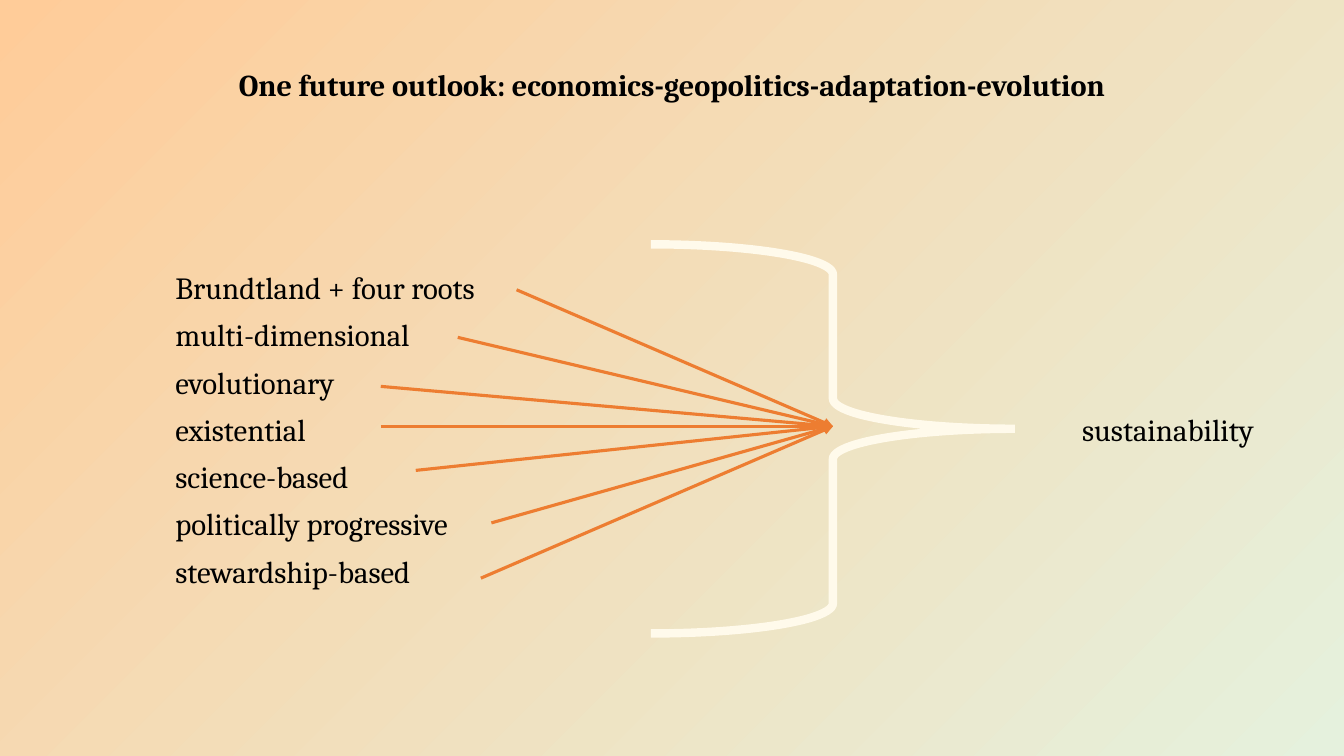
"""Build a slide on the roots of sustainability converging through a brace."""
import pptx
import pptx.util
import pptx.dml.color
import pptx.enum.shapes
import pptx.enum.text
import pptx.oxml
import pptx.oxml.ns

Pt = pptx.util.Pt
RGBColor = pptx.dml.color.RGBColor
PP_ALIGN = pptx.enum.text.PP_ALIGN

TITLE = "One future outlook: economics-geopolitics-adaptation-evolution"
ROOTS = [
    ("Brundtland + four roots", (369, 207)),
    ("multi-dimensional", (327, 241)),
    ("evolutionary", (272, 276)),
    ("existential", (272, 304.5)),
    ("science-based", (297, 336)),
    ("politically progressive", (351, 373.5)),
    ("stewardship-based", (343.5, 413)),
]
RESULT, RESULT_ROW = "sustainability", 3

BLACK = RGBColor(0, 0, 0)
PEACH = RGBColor(0xFF, 0xCC, 0x99)
MINT = RGBColor(0xE5, 0xF1, 0xDD)
CREAM = RGBColor(0xFF, 0xFA, 0xEB)
ORANGE = RGBColor(0xED, 0x7D, 0x31)

LIST_LEFT, LIST_TOP, ROW_PITCH, ROW_GAP = 125.3, 195, 33.7, 10
BRACE = (465, 174.5, 260, 278)
FOCUS = (BRACE[0] + BRACE[2] / 2, 304.5)
TITLE_FONT = {"name": "Cambria", "size": Pt(21.6), "bold": True}
BODY_FONT = {"name": "Cambria", "size": Pt(22), "bold": False}


def add_text(s, box, lines, font, align=PP_ALIGN.LEFT):
    tf = s.shapes.add_textbox(*map(Pt, box)).text_frame
    frame = {"word_wrap": True, "margin_left": 0, "margin_right": 0,
             "margin_top": 0, "margin_bottom": 0}
    for key, value in frame.items():
        setattr(tf, key, value)
    for i, line in enumerate(lines):
        p = tf.add_paragraph() if i else tf.paragraphs[0]
        spacing = {"alignment": align, "line_spacing": 0.9,
                   "space_before": Pt(0), "space_after": Pt(ROW_GAP)}
        for key, value in spacing.items():
            setattr(p, key, value)
        r = p.add_run()
        r.text = line
        for key, value in font.items():
            setattr(r.font, key, value)
        r.font.color.rgb = BLACK


def style_line(sp, color, width, detail):
    sp.line.color.rgb = color
    sp.line.width = Pt(width)
    sp.line._get_or_add_ln().append(pptx.oxml.parse_xml(
        f'<a:{detail} {pptx.oxml.ns.nsdecls("a")}/>'))


def add_arrow(s, start, end):
    sp = s.shapes.add_connector(
        pptx.enum.shapes.MSO_CONNECTOR.STRAIGHT, *map(Pt, start + end))
    style_line(sp, ORANGE, 2.25, 'tailEnd type="triangle"'.replace(
        "tailEnd", f'tailEnd {pptx.oxml.ns.nsdecls("a")}', 0))
    sp._element.spPr.append(pptx.oxml.parse_xml(
        f'<a:effectLst {pptx.oxml.ns.nsdecls("a")}/>'))


def add_brace(s):
    sp = s.shapes.add_shape(
        pptx.enum.shapes.MSO_SHAPE.RIGHT_BRACE, *map(Pt, BRACE))
    sp.adjustments[0], sp.adjustments[1] = 0.083, 0.474
    sp.shadow.inherit = False
    sp.fill.background()
    style_line(sp, CREAM, 6, 'miter lim="800000"')


def main():
    prs = pptx.Presentation()
    prs.slide_width, prs.slide_height = Pt(960), Pt(540)
    s = prs.slides.add_slide(prs.slide_layouts[6])
    fill = s.background.fill
    fill.gradient()
    fill.gradient_angle = 315
    for stop, color in zip(fill.gradient_stops, (PEACH, MINT)):
        stop.color.rgb = color

    add_text(s, (120, 50, 720, 27), [TITLE], TITLE_FONT, PP_ALIGN.CENTER)
    add_text(s, (LIST_LEFT, LIST_TOP, 250, ROW_PITCH * len(ROOTS)),
             [name for name, start in ROOTS], BODY_FONT)
    add_text(s, (773, LIST_TOP + RESULT_ROW * ROW_PITCH, 150, ROW_PITCH),
             [RESULT], BODY_FONT)
    add_brace(s)
    for name, start in ROOTS:
        add_arrow(s, start, FOCUS)
    prs.save("out.pptx")


if __name__ == "__main__":
    main()
